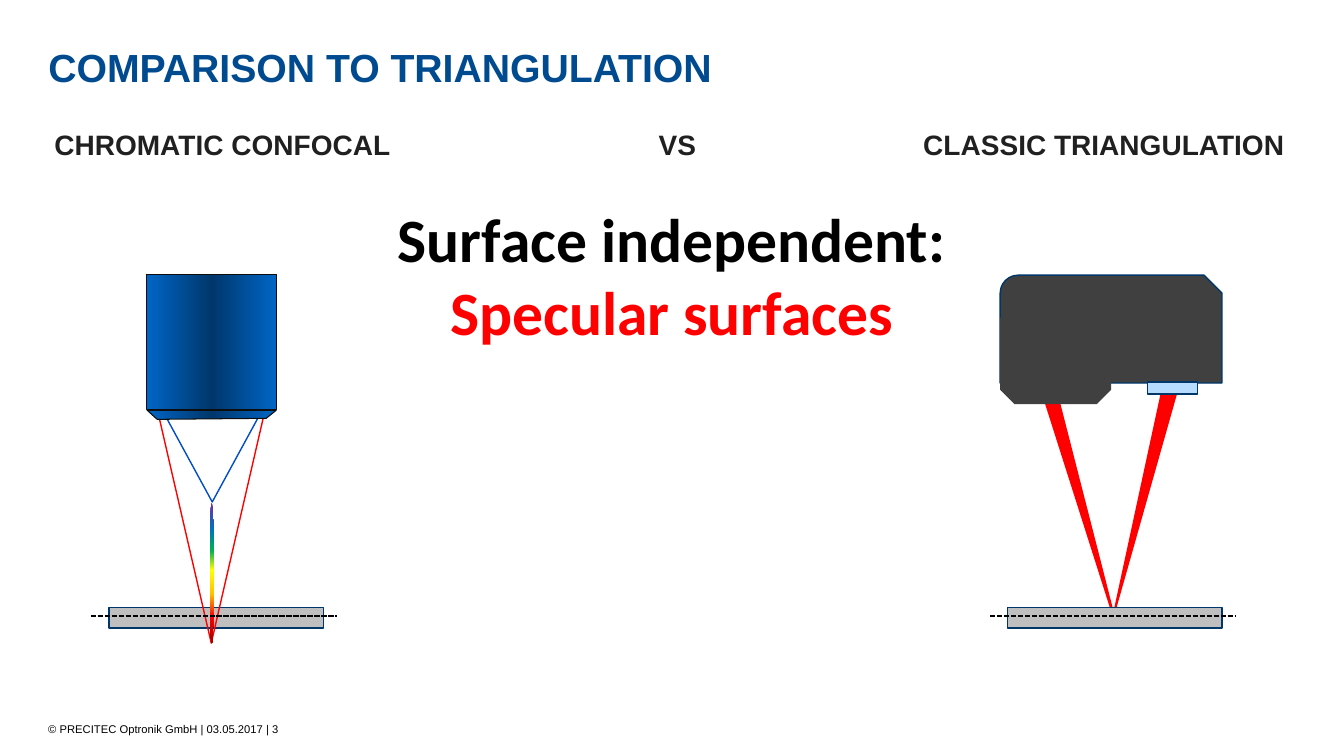
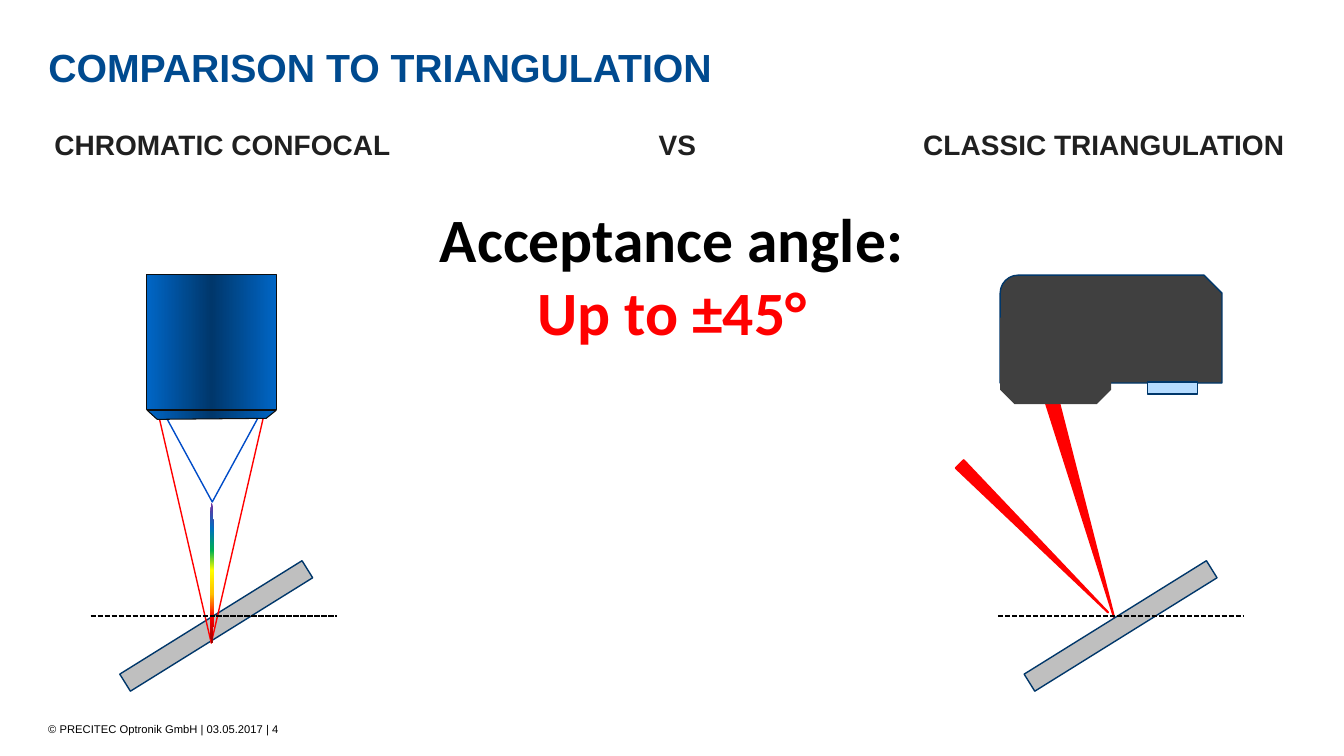
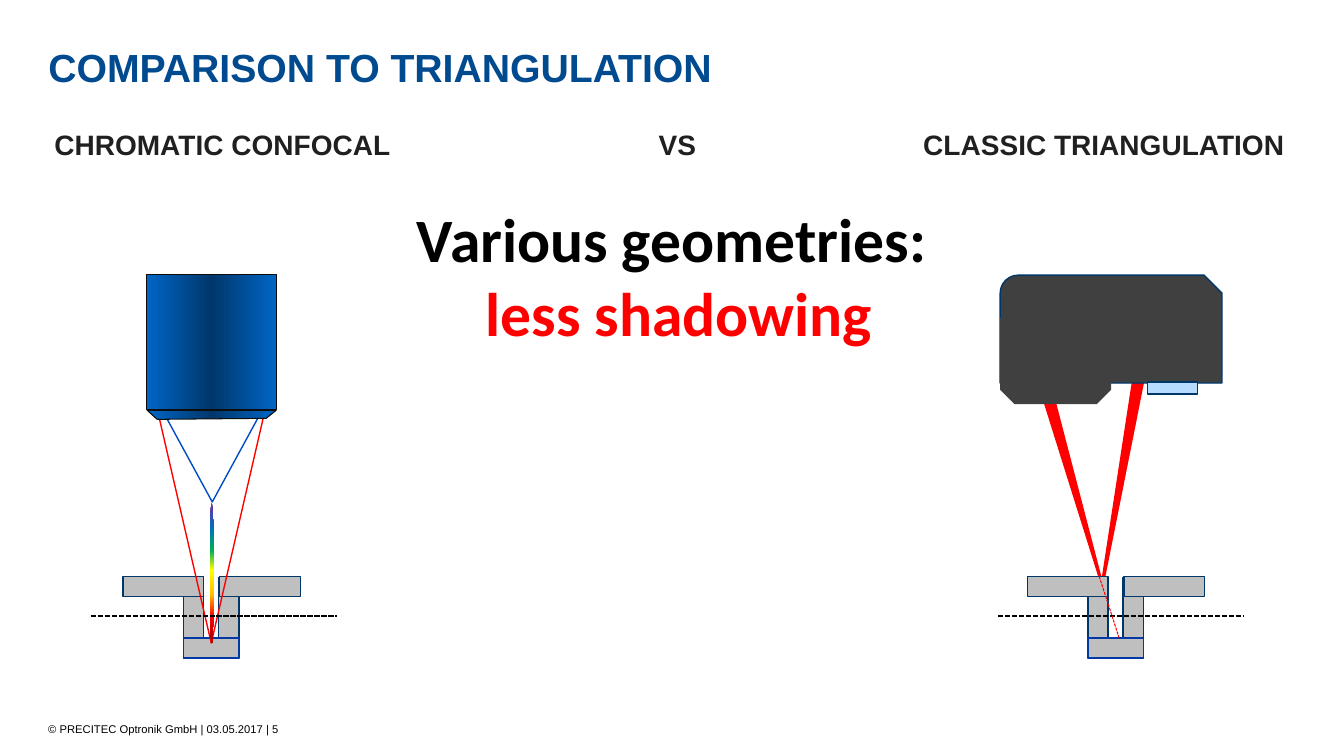
from dataclasses import dataclass, replace

from lxml import etree
from pptx import Presentation
from pptx import util as u
from pptx.dml.color import RGBColor
from pptx.enum import dml, shapes as sh, text as tx
from pptx.oxml.ns import qn

# All lengths are in columns and rows of a square grid, ten cells to the inch.
WIDE, TALL = 133.3, 75
NAVY, BLACK, RED, GREY = "00376A", "000000", "FF0000", "BFBFBF"
STEEL = ((0, "0066C6"), (50, "00376B"), (100, "0066C6"))
RAINBOW = ((0, "7030A0"), (18, "0070C0"), (34, "00B050"), (48, "FFFF00"),
           (65, "FFC000"), (81, "FF0000"), (100, "960000"))
KIND = sh.MSO_SHAPE

TITLE = "COMPARISON TO TRIANGULATION"
HEADS = "CHROMATIC CONFOCAL\tVS\tCLASSIC TRIANGULATION"
NOTE = "© PRECITEC Optronik GmbH | 03.05.2017 | "
TITLE_FONT = {"name": "Arial", "size": u.Pt(28), "bold": True}
HEAD_FONT = {"name": "Arial", "size": u.Pt(20), "bold": True}
CLAIM_FONT = {"name": "Calibri", "size": u.Pt(44), "bold": True}
NOTE_FONT = {"name": "Arial", "size": u.Pt(8)}


@dataclass(frozen=True)
class Part:
    kind: KIND
    x: float
    y: float
    w: float
    h: float
    fill: str | tuple = ""
    line: str = ""
    weight: float = 1
    turn: float = 0
    angle: float = 0


@dataclass(frozen=True)
class Page:
    claim: str
    gain: str
    width: float
    height: float
    sample: tuple
    shift: float
    axis: float
    beams: tuple
    nudge: float = 0


def slab(x: float, y: float, w: float, h: float, turn: float = 0,
         line: str = NAVY) -> Part:
    return Part(KIND.RECTANGLE, x, y, w, h, GREY, line, turn=turn)


def beam(x: float, y: float, w: float, h: float, turn: float) -> Part:
    return Part(KIND.ISOSCELES_TRIANGLE, x, y, w, h, RED, RED, 1.5, turn)


def cone(x: float, y: float, w: float, h: float, line: str) -> Part:
    return Part(KIND.ISOSCELES_TRIANGLE, x, y, w, h, line=line, turn=180)


OPTICS = (
    cone(13, 35, 16.1, 14.8, "004CC8"),
    cone(15.2, 38.9, 11.5, 24.9, RED),
    Part(KIND.OVAL, 20.8, 49.9, 0.4, 13.9, RAINBOW, angle=270),
    Part(KIND.RECTANGLE, 27.5, 32.1, 2.6, 6.4, "FFFFFF"),
    Part(KIND.RECTANGLE, 11.9, 33, 2.6, 6.4, "FFFFFF"),
    Part(KIND.RECTANGLE, 14.55, 27.25, 12.9, 13.4, STEEL, "0D0D0D"),
)
RIM = ((27.4, 40.7), (26.4, 41.5), (15.6, 41.6), (14.6, 40.7))
SENSOR = (
    Part(KIND.SNIP_ROUND_RECTANGLE, 99.2, 27.3, 22, 10.7, "404040", NAVY),
    Part(KIND.SNIP_2_SAME_RECTANGLE, 99.2, 31.5, 11, 8.6, "404040", turn=180),
    Part(KIND.RECTANGLE, 113.8, 37.9, 5, 1.2, "B6DCFF", NAVY),
)
SLOT = (
    slab(18.2, 57.3, 2, 8), slab(21.7, 57.3, 2, 8),
    slab(18.2, 63.3, 5.5, 2, line="0038A8"),
    slab(12.2, 57.2, 8, 2), slab(21.8, 57.2, 8, 2),
)
SENT = beam(106.7, 38.9, 1.3, 22.8, 164)

PAGES = (
    Page("Surface independent:", "Specular surfaces", 59.9, 36,
         (slab(10.8, 60.3, 21.3, 2),), 89.1, 98.2,
         (beam(112.6, 38.4, 1.4, 22.3, 194), SENT)),
    Page("Acceptance angle:", "Up to ±45°", 55.1, 36,
         (slab(10.8, 61.1, 21.3, 2, 328.1),), 89.7, 99,
         (beam(102, 43, 1.1, 20.8, 135), SENT)),
    Page("Various geometries:", "less shadowing", 57.5, 24.9,
         SLOT, 89.7, 99,
         (beam(110.4, 37.8, 1, 22.5, 190), beam(106.3, 39, 1, 20.5, 164)),
         nudge=1.4),
)


def cell(n: float) -> int:
    return u.Inches(n / 10)


def hue(code: str) -> RGBColor:
    return RGBColor.from_string(code)


def apply(item, values: dict) -> None:
    for name, value in values.items():
        setattr(item, name, value)


def blend(shape, stops: tuple, angle: float) -> None:
    """Fill a shape with a gradient of any number of stops."""
    shape.fill.gradient()
    shape.fill.gradient_angle = angle
    steps = shape.element.spPr.find(qn("a:gradFill")).find(qn("a:gsLst"))
    steps.clear()
    for share, code in stops:
        step = etree.SubElement(steps, qn("a:gs"), pos=str(share * 1000))
        etree.SubElement(step, qn("a:srgbClr"), val=code)


def paint(shape, fill: str | tuple, line: str, weight: float,
          angle: float = 0) -> None:
    shape.shadow.inherit = False
    if isinstance(fill, tuple):
        blend(shape, fill, angle)
    elif fill:
        shape.fill.solid()
        shape.fill.fore_color.rgb = hue(fill)
    else:
        shape.fill.background()
    if line:
        shape.line.color.rgb = hue(line)
        shape.line.width = u.Pt(weight)
    else:
        shape.line.fill.background()


def draw(tree, parts: tuple, shift: float = 0) -> None:
    for part in parts:
        part = replace(part, x=part.x + shift)
        box = map(cell, (part.x, part.y, part.w, part.h))
        shape = tree.add_shape(part.kind, *box)
        shape.rotation = part.turn
        paint(shape, part.fill, part.line, part.weight, part.angle)


def dash(tree, x1: float, y1: float, x2: float, y2: float,
         code: str = BLACK, weight: float = 1.25) -> None:
    line = tree.add_connector(sh.MSO_CONNECTOR.STRAIGHT,
                              *map(cell, (x1, y1, x2, y2)))
    line.line.color.rgb = hue(code)
    apply(line.line, {"width": u.Pt(weight),
                      "dash_style": dml.MSO_LINE.SQUARE_DOT})
    etree.SubElement(line.element.spPr, qn("a:effectLst"))


def write(para, words: str, font: dict, code: str) -> None:
    run = para.add_run()
    run.text = words
    apply(run.font, font)
    run.font.color.rgb = hue(code)


def label(tree, x: float, y: float, w: float, h: float):
    frame = tree.add_textbox(*map(cell, (x, y, w, h))).text_frame
    frame.word_wrap = True
    return frame


def frame_page(slide, number: int) -> None:
    """Put in what every slide shares: title, column heads and footer."""
    title = slide.shapes.title
    apply(title, {"left": cell(3.8), "top": cell(3.8),
                  "width": cell(124.5), "height": cell(5.7)})
    apply(title.text_frame, {"vertical_anchor": tx.MSO_ANCHOR.BOTTOM,
                             "auto_size": tx.MSO_AUTO_SIZE.NONE,
                             "word_wrap": True})
    para = title.text_frame.paragraphs[0]
    apply(para, {"alignment": tx.PP_ALIGN.LEFT, "line_spacing": 0.9})
    write(para, TITLE, TITLE_FONT, "004A8F")

    para = label(slide.shapes, 4.4, 12.5, 124.5, 5.4).paragraphs[0]
    para.line_spacing = 0.9
    tabs = etree.SubElement(para._p.get_or_add_pPr(), qn("a:tabLst"))
    for stop, side in ((61.8, "ctr"), (122, "r")):
        etree.SubElement(tabs, qn("a:tab"), pos=str(cell(stop)), algn=side)
    write(para, HEADS, HEAD_FONT, "202020")

    para = label(slide.shapes, 3.8, 71.2, 99.2, 2.4).paragraphs[0]
    write(para, f"{NOTE}{number}", NOTE_FONT, BLACK)


def state(tree, page: Page) -> None:
    """Write the two centred lines of the claim."""
    frame = label(tree, (WIDE - page.width) / 2, 19.4, page.width, page.height)
    first, last = frame.paragraphs[0], frame.add_paragraph()
    last._p.get_or_add_pPr().set("marL", str(cell(page.nudge)))
    for para, words, code in ((first, page.claim, BLACK),
                              (last, page.gain, RED)):
        para.alignment = tx.PP_ALIGN.CENTER
        write(para, words, CLAIM_FONT, code)


def probe(tree) -> None:
    """Draw the confocal head with its cones of light."""
    group = tree.add_group_shape().shapes
    draw(group, OPTICS)
    start, *rest = [tuple(map(cell, point)) for point in RIM]
    form = group.build_freeform(*start)
    form.add_line_segments(rest, close=True)
    paint(form.convert_to_shape(), STEEL, "0D0D0D", 0.75)


def main() -> None:
    deck = Presentation()
    apply(deck, {"slide_width": cell(WIDE), "slide_height": cell(TALL)})
    for number, page in enumerate(PAGES, 3):
        slide = deck.slides.add_slide(deck.slide_layouts[5])
        tree = slide.shapes
        frame_page(slide, number)
        state(tree, page)
        draw(tree, page.sample)
        probe(tree)
        draw(tree, page.beams)
        draw(tree.add_group_shape().shapes, SENSOR)
        draw(tree, page.sample, page.shift)
        for left in (9, page.axis):
            dash(tree, left, 61.1, left + 24.4, 61.1)
        if page.sample is SLOT:
            dash(tree, 108.9, 56.8, 111, 63.3, RED, 0.75)
    deck.save("out.pptx")


if __name__ == "__main__":
    main()
